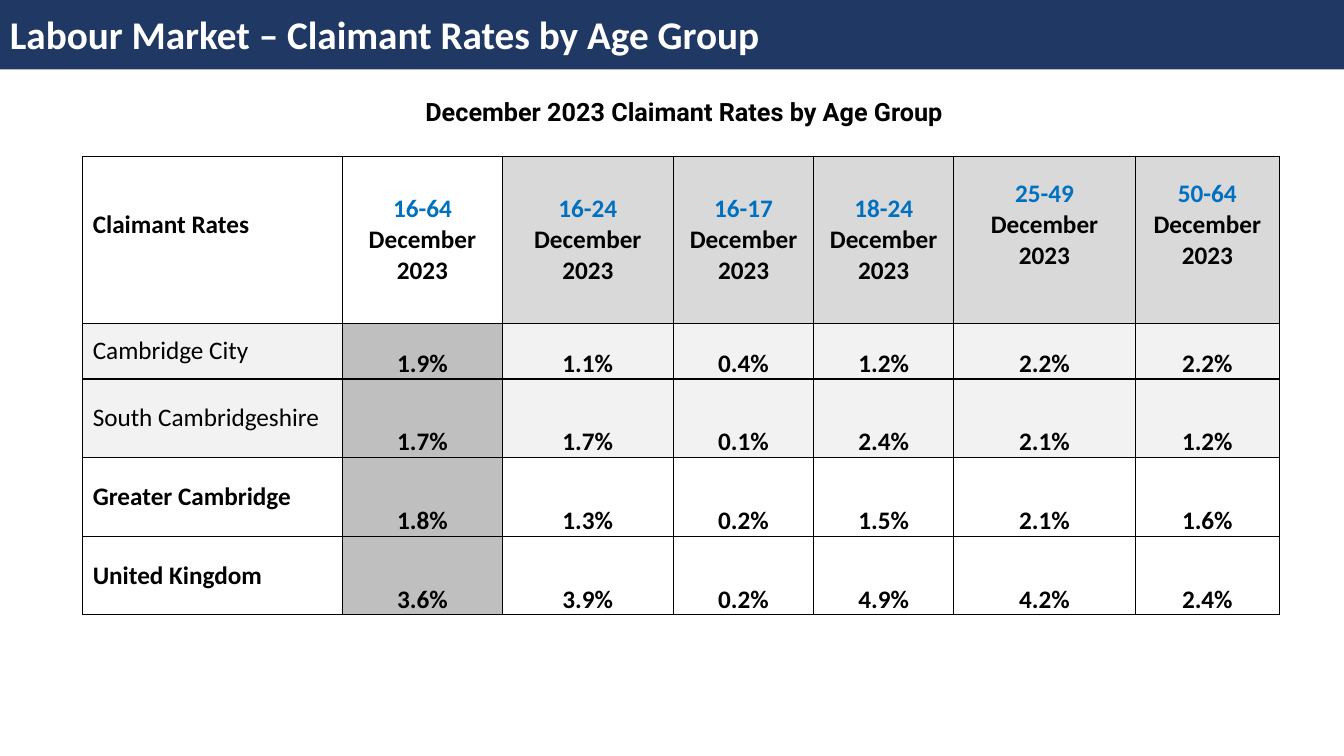
import pptx
import pptx.util
import pptx.dml.color
import pptx.enum.shapes
import pptx.enum.text
import lxml.etree

# Content
TITLE = "Labour Market – Claimant Rates by Age Group"
HEAD = "December 2023 Claimant Rates by Age Group"
CORNER = "Claimant Rates"
AGES = [
    ("16-64", "December 2023"),
    ("16-24", "December 2023"),
    ("16-17", "December", "2023"),
    ("18-24", "December", "2023"),
    ("25-49", "December", "2023"),
    ("50-64", "December", "2023"),
]
RATES = [
    ("Cambridge City", "1.9%", "1.1%", "0.4%", "1.2%", "2.2%", "2.2%"),
    ("South Cambridgeshire", "1.7%", "1.7%", "0.1%", "2.4%", "2.1%", "1.2%"),
    ("Greater Cambridge", "1.8%", "1.3%", "0.2%", "1.5%", "2.1%", "1.6%"),
    ("United Kingdom", "3.6%", "3.9%", "0.2%", "4.9%", "4.2%", "2.4%"),
]
DISTRICTS = 2  # leading rows with plain labels and a light band

# Layout, in inches
WIDE, HIGH = 13.33, 7.5
COLS = [2.58, 1.58, 1.7, 1.39, 1.39, 1.8, 1.43]
ROWS = [1.66, 0.55, 0.78, 0.78, 0.78]
RAISED = (0, 5, 6)  # header columns set above the middle
HEX = {"navy": "203864", "blue": "0070C0", "black": "000000", "white": "FFFFFF",
       "head": "D9D9D9", "band": "F2F2F2", "total": "BFBFBF"}

inch = pptx.util.Inches
ALIGN = pptx.enum.text.PP_ALIGN
ANCHOR = pptx.enum.text.MSO_ANCHOR


def tint(name):
    return pptx.dml.color.RGBColor.from_string(HEX[name])


def write(frame, *lines, size=18, font="Calibri", bold=True, color="black",
          first=None, align=ALIGN.CENTER):
    """Put one paragraph per line; first colours the opening line."""
    for n, line in enumerate(lines):
        para = frame.add_paragraph() if n else frame.paragraphs[0]
        para.alignment = align
        run = para.add_run()
        run.text = line
        run.font.size = pptx.util.Pt(size)
        run.font.name = font
        run.font.bold = bold
        run.font.color.rgb = tint(first if first and n == 0 else color)


def rule(cell):
    """Draw a thin black line on all four sides of a cell."""
    props = cell._tc.get_or_add_tcPr()
    space = pptx.oxml.ns.nsdecls("a")
    for side in "LRTB":
        props.append(pptx.oxml.parse_xml(
            f'<a:ln{side} {space} w="12700"><a:solidFill>'
            f'<a:srgbClr val="{HEX["black"]}"/></a:solidFill></a:ln{side}>'))


def shade(row, col):
    if row == 0:
        return "head" if col > 1 else "white"
    if col == 1:
        return "total"
    return "band" if row <= DISTRICTS else "white"


deck = pptx.Presentation()
deck.slide_width, deck.slide_height = inch(WIDE), inch(HIGH)
slide = deck.slides.add_slide(deck.slide_layouts[6])

# Title bar
bar = slide.shapes.add_shape(pptx.enum.shapes.MSO_SHAPE.RECTANGLE,
                             0, inch(-0.02), inch(WIDE), inch(0.71))
bar.shadow.inherit = False
bar.fill.solid()
bar.fill.fore_color.rgb = tint("navy")
bar.line.fill.background()
bar.text_frame.vertical_anchor = ANCHOR.MIDDLE
write(bar.text_frame, TITLE, size=28, color="white", align=ALIGN.LEFT)

# Table heading
box = slide.shapes.add_textbox(inch(2.17), inch(0.91), inch(9.23), inch(0.4))
box.text_frame.word_wrap = True
write(box.text_frame, HEAD, font="Roboto")

# Table of rates
table = slide.shapes.add_table(len(ROWS), len(COLS), inch(0.82), inch(1.55),
                               inch(sum(COLS)), inch(sum(ROWS))).table
table.first_row = table.horz_banding = False
for col, width in zip(table.columns, COLS):
    col.width = inch(width)
for row, height in zip(table.rows, ROWS):
    row.height = inch(height)

for r, items in enumerate([(CORNER, *AGES), *RATES]):
    for c, item in enumerate(items):
        cell = table.cell(r, c)
        rule(cell)
        cell.fill.solid()
        cell.fill.fore_color.rgb = tint(shade(r, c))
        cell.vertical_anchor = ANCHOR.MIDDLE
        if r == 0 and c in RAISED:
            cell.margin_bottom = inch(0.35)
        if c == 0:
            write(cell.text_frame, item, bold=not 0 < r <= DISTRICTS,
                  align=ALIGN.LEFT)
        elif r == 0:
            write(cell.text_frame, *item, first="blue")
        else:
            cell.vertical_anchor = ANCHOR.BOTTOM
            cell.margin_left = cell.margin_right = cell.margin_top = inch(0.01)
            cell.margin_bottom = 0
            write(cell.text_frame, item)

deck.save("out.pptx")
